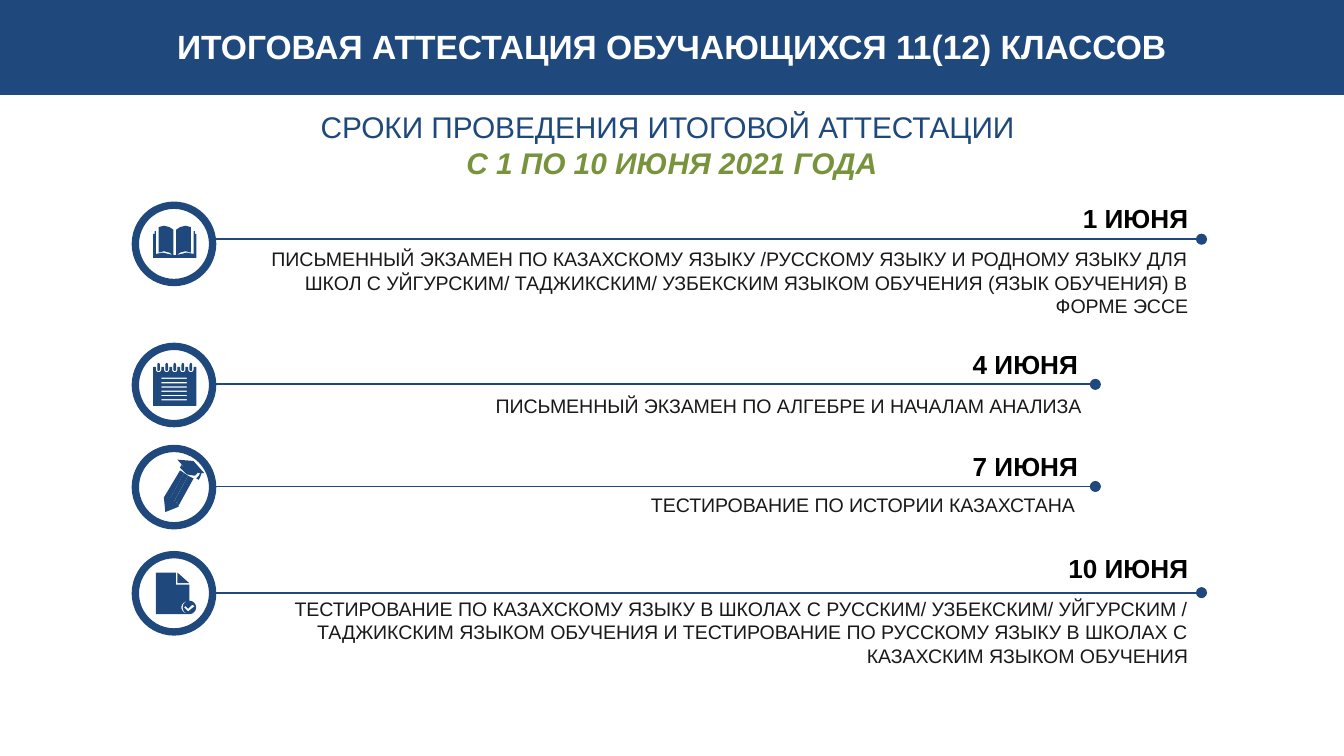
from math import cos, radians, sin

from lxml.etree import SubElement
from pptx import Presentation
from pptx.dml.color import RGBColor
from pptx.enum.shapes import MSO_CONNECTOR as Connector, MSO_SHAPE as Preset
from pptx.enum.text import MSO_ANCHOR as Anchor, PP_ALIGN as Align
from pptx.oxml.ns import qn
from pptx.util import Inches, Pt

THEME = {
    "font": "Arial",
    "navy": "1F497D", "green": "77933C", "white": "FFFFFF", "black": "000000", "body": "191919",
    "title": 18, "subtitle": 16, "date": 14, "detail": 10.5,
}
TITLE = "ИТОГОВАЯ АТТЕСТАЦИЯ ОБУЧАЮЩИХСЯ 11(12) КЛАССОВ"
SUBTITLE = "СРОКИ ПРОВЕДЕНИЯ ИТОГОВОЙ АТТЕСТАЦИИ "
PERIOD = "C 1 ПО 10 ИЮНЯ 2021 ГОДА"
EXAMS = [
    {"icon": "book", "date": "1 ИЮНЯ", "ring": 1.5, "rule": (1.78, 8.94),
     "date_box": (3.71, 1.46, 5.23, 0.34), "detail_box": (1.61, 1.79, 7.33, 0.63),
     "detail": "ПИСЬМЕННЫЙ ЭКЗАМЕН ПО КАЗАХСКОМУ ЯЗЫКУ /РУССКОМУ ЯЗЫКУ И РОДНОМУ ЯЗЫКУ ДЛЯ ШКОЛ "
               "С УЙГУРСКИМ/ ТАДЖИКСКИМ/ УЗБЕКСКИМ ЯЗЫКОМ ОБУЧЕНИЯ (ЯЗЫК ОБУЧЕНИЯ) В ФОРМЕ ЭССЕ"},
    {"icon": "notepad", "date": "4 ИЮНЯ", "ring": 2.55, "rule": (2.86, 8.15),
     "date_box": (4.84, 2.54, 3.28, 0.34), "detail_box": (3.03, 2.88, 5.12, 0.28),
     "detail": "ПИСЬМЕННЫЙ ЭКЗАМЕН ПО АЛГЕБРЕ И НАЧАЛАМ АНАЛИЗА"},
    {"icon": "pencil", "date": "7 ИЮНЯ", "ring": 3.31, "rule": (3.62, 8.15),
     "date_box": (4.17, 3.3, 3.95, 0.34), "detail_box": (4.17, 3.62, 3.93, 0.29),
     "detail": "ТЕСТИРОВАНИЕ ПО ИСТОРИИ КАЗАХСТАНА"},
    {"icon": "document", "date": "10 ИЮНЯ", "ring": 4.1, "rule": (4.41, 8.94),
     "date_box": (5.13, 4.06, 3.81, 0.34), "detail_box": (1.68, 4.39, 7.26, 0.63),
     "detail": "ТЕСТИРОВАНИЕ ПО КАЗАХСКОМУ ЯЗЫКУ В ШКОЛАХ С РУССКИМ/ УЗБЕКСКИМ/ УЙГУРСКИМ / "
               "ТАДЖИКСКИМ ЯЗЫКОМ ОБУЧЕНИЯ И ТЕСТИРОВАНИЕ ПО РУССКОМУ ЯЗЫКУ В ШКОЛАХ С "
               "КАЗАХСКИМ ЯЗЫКОМ ОБУЧЕНИЯ"},
]
RING_LEFT, RING_SIZE = 0.98, 0.63


def arc(x, y, rx, ry, start=0, end=360, steps=16):
    angles = [radians(start + (end - start) * i / steps) for i in range(steps + 1)]
    return [(x + rx * cos(a), y + ry * sin(a)) for a in angles]


def mirror(points, axis):
    return [(2 * axis - x, y) for x, y in points]


def book():
    leaf = [(1.18, 1.69), (1.22, 1.68), (1.26, 1.69), (1.29, 1.71),
            (1.29, 1.9), (1.26, 1.88), (1.22, 1.87), (1.18, 1.88)]
    cover = [(1.14, 1.74), (1.15, 1.74), (1.15, 1.72), (1.16, 1.72), (1.16, 1.89),
             (1.21, 1.88), (1.25, 1.89), (1.3, 1.9), (1.3, 1.92), (1.14, 1.92)]
    return [[leaf, mirror(leaf, 1.3), cover, mirror(cover, 1.3)]]


def notepad():
    centers = [1.18 + 0.06 * i for i in range(5)]
    body, rings = [(1.14, 2.73)], []
    for x in centers:
        body += [(x - 0.02, 2.73), *arc(x, 2.75, 0.02, 0.02, 180, 0), (x + 0.02, 2.73)]
        rings.append(arc(x, 2.72, 0.01, 0.02, 180, 360) + arc(x, 2.75, 0.01, 0.01, 0, 180))
    body += [(1.46, 2.73), (1.46, 3.02), (1.14, 3.02)]
    tops = [2.81 + 0.16 * i / 5 for i in range(6)]
    slots = [[(1.2, y), (1.39, y), (1.39, y + 0.01), (1.2, y + 0.01)] for y in tops]
    return [[body, *slots, *rings]]


def pencil():
    tip = [(1.23, 3.69), (1.33, 3.75), (1.33, 3.77), (1.23, 3.81), (1.22, 3.71)]
    stripes = [
        [(1.34, 3.5), (1.37, 3.52), (1.26, 3.72), (1.25, 3.7), (1.22, 3.71), (1.22, 3.7)],
        [(1.37, 3.52), (1.4, 3.54), (1.29, 3.74), (1.28, 3.72), (1.26, 3.72)],
        [(1.4, 3.54), (1.44, 3.56), (1.33, 3.76), (1.32, 3.74), (1.29, 3.74)],
    ]
    band = [(1.35, 3.46), (1.4, 3.51), (1.47, 3.52), (1.45, 3.54), (1.39, 3.53), (1.34, 3.48)]
    board = [(1.44, 3.43), (1.52, 3.52), (1.5, 3.52), (1.49, 3.55), (1.48, 3.57), (1.46, 3.56),
             (1.48, 3.54), (1.49, 3.52), (1.4, 3.51), (1.32, 3.42)]
    return [[tip], *[[stripe] for stripe in stripes], [band, board]]


def document():
    sheet = [(1.16, 4.26), (1.31, 4.26), (1.31, 4.35), (1.41, 4.35),
             *arc(1.41, 4.52, 0.06, 0.05, 270, 90), (1.16, 4.57)]
    fold = [(1.32, 4.26), (1.41, 4.34), (1.32, 4.34)]
    check = [(1.43, 4.5), (1.4, 4.53), (1.38, 4.51), (1.37, 4.52), (1.4, 4.55), (1.45, 4.51)]
    return [[sheet, fold, arc(1.41, 4.52, 0.05, 0.05), check]]


ICONS = {"book": book, "notepad": notepad, "pencil": pencil, "document": document}


def color(name):
    return RGBColor.from_string(THEME[name])


def write(para, text, size, ink, align=Align.RIGHT, bold=False, italic=False):
    para.alignment = align
    span = para.add_run()
    span.text = text
    span.font.name, span.font.size = THEME["font"], Pt(THEME[size])
    span.font.bold, span.font.italic = bold, italic
    span.font.color.rgb = color(ink)


def add_box(shapes, place):
    frame = shapes.add_textbox(*map(Inches, place)).text_frame
    frame.word_wrap = True
    return frame


def paint(shape):
    shape.shadow.inherit = False
    shape.fill.solid()
    shape.fill.fore_color.rgb = color("navy")
    shape.line.fill.background()


def add_outline(shapes, contours):
    builder = None
    for contour in contours:
        points = [(Inches(x), Inches(y)) for x, y in contour]
        if builder is None:
            builder = shapes.build_freeform(*points[0])
        else:
            builder.move_to(*points[0])
        builder.add_line_segments(points[1:], close=True)
    paint(builder.convert_to_shape())


def add_rule(shapes, y, end):
    start = RING_LEFT + RING_SIZE
    rule = shapes.add_connector(Connector.STRAIGHT, *map(Inches, (start, y, end, y)))
    rule.line.color.rgb = color("navy")
    rule.line.width = Pt(1)
    SubElement(rule.line._get_or_add_ln(), qn("a:tailEnd"), type="oval")
    SubElement(rule._element.spPr, qn("a:effectLst"))


def add_exam(page, exam):
    shapes = page.shapes.add_group_shape().shapes
    place = (RING_LEFT, exam["ring"], RING_SIZE, RING_SIZE)
    ring = shapes.add_shape(Preset.DONUT, *map(Inches, place))
    ring.adjustments[0] = 0.087
    paint(ring)
    add_rule(shapes, *exam["rule"])
    write(add_box(shapes, exam["detail_box"]).paragraphs[0], exam["detail"], "detail", "body")
    write(add_box(shapes, exam["date_box"]).paragraphs[0], exam["date"], "date", "black", bold=True)
    for contours in ICONS[exam["icon"]]():
        add_outline(shapes, contours)


def main():
    """Build the slide with the final exam schedule."""
    deck = Presentation()
    deck.slide_width, deck.slide_height = Inches(10), Inches(10 * 9 / 16)
    page = deck.slides.add_slide(deck.slide_layouts[6])

    banner = page.shapes.add_shape(Preset.RECTANGLE, *map(Inches, (0, 0, 10, 0.69)))
    paint(banner)
    banner.line.color.rgb = color("navy")
    banner.line.width = Pt(2)
    banner.text_frame.vertical_anchor = Anchor.MIDDLE
    write(banner.text_frame.paragraphs[0], TITLE, "title", "white", align=Align.CENTER, bold=True)

    frame = add_box(page.shapes, (0, 0.77, 10, 0.61))
    frame.margin_top = frame.margin_bottom = Inches(0.04)
    write(frame.paragraphs[0], SUBTITLE, "subtitle", "navy", align=Align.CENTER)
    write(frame.add_paragraph(), PERIOD, "subtitle", "green", align=Align.CENTER, bold=True, italic=True)

    for exam in EXAMS:
        add_exam(page, exam)
    deck.save("out.pptx")


if __name__ == "__main__":
    main()
